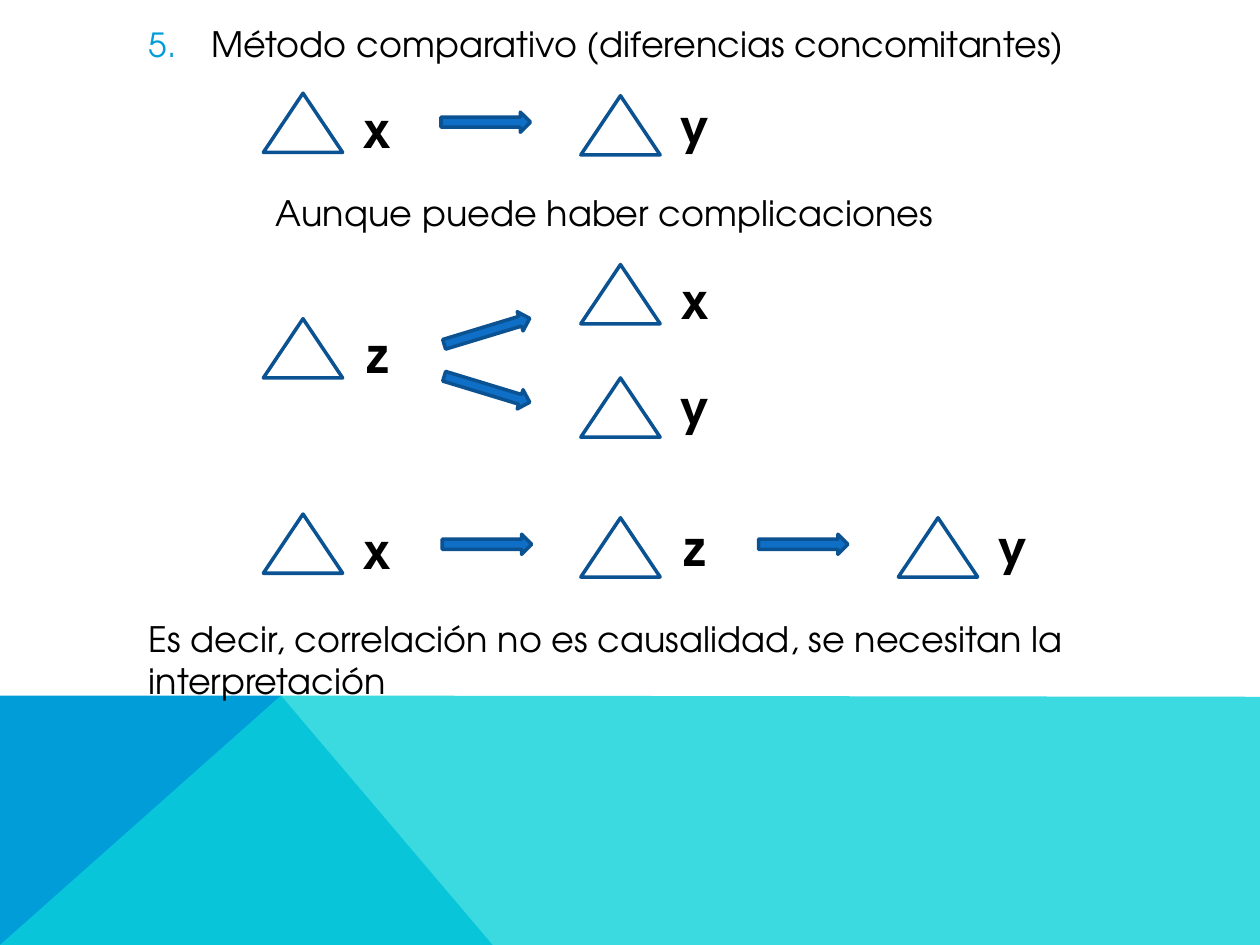
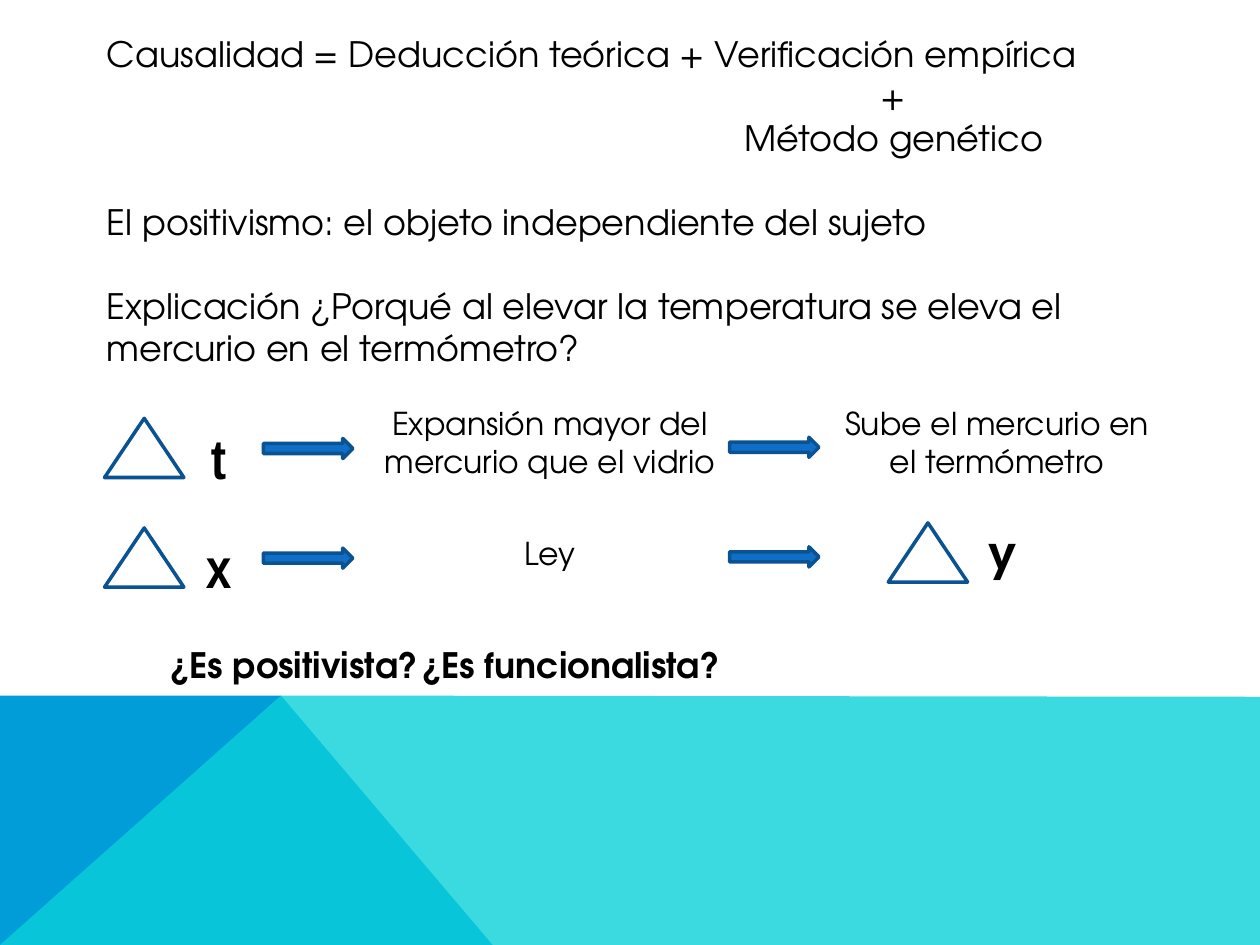
import pptx
import pptx.dml.color
import pptx.enum.shapes
import pptx.enum.text
import pptx.oxml.ns
import pptx.util
from lxml import etree

Inches = pptx.util.Inches
Pt = pptx.util.Pt
RGB = pptx.dml.color.RGBColor
KIND = pptx.enum.shapes.MSO_SHAPE
ALIGN = pptx.enum.text.PP_ALIGN
qn = pptx.oxml.ns.qn

BLACK = RGB(0x00, 0x00, 0x00)
SKY = RGB(0x00, 0x9D, 0xD9)
AQUA = RGB(0x0B, 0xD0, 0xD9)
BLUE = RGB(0x0F, 0x6F, 0xC6)
NAVY = RGB(0x0B, 0x52, 0x92)
FONT = "TeX Gyre Adventor"
NARROW = "Arial Narrow"


def write(box, text, size=20, font=FONT, bold=False, align=ALIGN.LEFT,
          before=0, left=0, hang=0, level=0, number=None, tabs=()):
    """Add one paragraph; left, hang and tabs are inches, before is points."""
    frame = box.text_frame
    frame.word_wrap = True
    para = frame.add_paragraph() if frame.text else frame.paragraphs[0]
    para.alignment = align
    para.level = level
    para.space_before = Pt(before)
    props = para._p.get_or_add_pPr()
    props.set("marL", str(Inches(left)))
    props.set("indent", str(Inches(-hang)))
    if number:
        tint = etree.SubElement(props, qn("a:buClr"))
        etree.SubElement(tint, qn("a:srgbClr"), val=str(SKY))
        etree.SubElement(props, qn("a:buSzPct"), val="95000")
        etree.SubElement(props, qn("a:buFont"), typeface=font)
        etree.SubElement(props, qn("a:buAutoNum"), type="arabicPeriod", startAt=str(number))
    else:
        etree.SubElement(props, qn("a:buNone"))
    if tabs:
        stops = etree.SubElement(props, qn("a:tabLst"))
        for stop in tabs:
            etree.SubElement(stops, qn("a:tab"), pos=str(Inches(stop)), algn="l")
    run = para.add_run()
    run.text = text
    run.font.size = Pt(size)
    run.font.name = font
    run.font.bold = bold
    run.font.color.rgb = BLACK


def draw(slide, kind, x, y, wide, high, fill=None, turn=0):
    shape = slide.shapes.add_shape(kind, Inches(x), Inches(y), Inches(wide), Inches(high))
    shape.shadow.inherit = False
    shape.rotation = turn
    shape.line.color.rgb = NAVY
    shape.line.width = Pt(2)
    if fill:
        shape.fill.solid()
        shape.fill.fore_color.rgb = fill
    else:
        shape.fill.background()


prs = pptx.Presentation()
prs.slide_width = Inches(10)
prs.slide_height = Inches(7.5)
first = prs.slides.add_slide(prs.slide_layouts[1])
second = prs.slides.add_slide(prs.slide_layouts[6])

# Bands shared by all slides, moved to the master
bands = [
    (SKY, None, [(0, 7.5), (0, 5.52), (2.23, 5.52), (3.91, 7.5)]),
    (AQUA, 80, [(0, 7.5), (2.23, 5.52), (10, 5.53), (10, 7.5)]),
]
tree = prs.slide_master.shapes.element
for place, (color, alpha, points) in enumerate(bands, start=2):
    points = [(Inches(x), Inches(y)) for x, y in points]
    pen = first.shapes.build_freeform(*points[0])
    pen.add_line_segments(points[1:], close=True)
    band = pen.convert_to_shape()
    band.shadow.inherit = False
    band.line.fill.background()
    band.fill.solid()
    band.fill.fore_color.rgb = color
    if alpha:
        tone = band.element.spPr.find(qn("a:solidFill")).find(qn("a:srgbClr"))
        etree.SubElement(tone, qn("a:alpha"), val=str(alpha * 1000))
    tree.insert(place, band.element)

# Slide 1: comparative method
title = first.shapes.title.element
title.getparent().remove(title)
body = first.placeholders[1]
body.left, body.top = Inches(0.59), Inches(0.13)
body.width, body.height = Inches(8.82), Inches(5.98)
body.text_frame.auto_size = pptx.enum.text.MSO_AUTO_SIZE.NONE
body.text_frame.vertical_anchor = pptx.enum.text.MSO_ANCHOR.TOP
write(body, "Método comparativo (diferencias concomitantes)",
      level=1, left=0.99, hang=0.5, number=5)
write(body, "Aunque puede haber complicaciones", level=1, left=1.5, before=72.6)
write(body, "Es decir, correlación no es causalidad, se necesitan la interpretación",
      level=1, left=0.49, before=219)

# Slide 2: causality and explanation
notes = second.shapes.add_textbox(Inches(0.75), Inches(0.21), Inches(8.03), Inches(5.49))
write(notes, "Causalidad = Deducción teórica + Verificación empírica")
write(notes, "+", left=6.14)
write(notes, "Método genético", left=5.06)
write(notes, "El positivismo: el objeto independiente del sujeto", before=24)
write(notes, "Explicación ¿Porqué al elevar la temperatura se eleva el mercurio en el termómetro?",
      before=24)
write(notes, "\t¿Es positivista?\t¿Es funcionalista?", bold=True, before=157, tabs=(1.51, 3.95))

for x, y, high, text in [
    (2.95, 3.16, 0.71, "Expansión mayor del mercurio que el vidrio"),
    (6.5, 3.16, 0.71, "Sube el mercurio en el termómetro"),
    (2.95, 4.19, 0.4, "Ley"),
]:
    step = second.shapes.add_textbox(Inches(x), Inches(y), Inches(2.83), Inches(high))
    write(step, text, size=18, align=ALIGN.CENTER)

# Deltas: triangle left and top, letter, letter top, letter size and font
deltas = [
    (first, 2.09, 0.74, "x", 0.74, 28, FONT),
    (first, 4.61, 0.76, "y", 0.72, 28, FONT),
    (first, 2.09, 2.53, "z", 2.53, 28, FONT),
    (first, 4.61, 2.1, "x", 2.1, 28, FONT),
    (first, 4.61, 3, "y", 2.95, 28, FONT),
    (first, 2.09, 4.08, "x", 4.08, 28, FONT),
    (first, 4.61, 4.11, "z", 4.06, 28, FONT),
    (first, 7.13, 4.11, "y", 4.06, 28, FONT),
    (second, 0.83, 3.32, "t", 3.31, 32, NARROW),
    (second, 0.83, 4.19, "x", 4.18, 32, NARROW),
    (second, 7.05, 4.15, "y", 4.1, 28, FONT),
]
for slide, x, y, name, top, size, font in deltas:
    draw(slide, KIND.ISOSCELES_TRIANGLE, x, y, 0.63, 0.47)
    label = slide.shapes.add_textbox(Inches(x + 0.63), Inches(top), Inches(0.55),
                                     Inches(size / 50))
    write(label, name, size=size, font=font, bold=True, align=ALIGN.CENTER)

arrows = [
    (first, 3.5, 0.89, 0),
    (first, 3.51, 2.55, -16.9),
    (first, 3.51, 3.01, 16.9),
    (first, 3.51, 4.24, 0),
    (first, 6.02, 4.24, 0),
    (second, 2.09, 3.48, 0),
    (second, 5.79, 3.47, 0),
    (second, 2.09, 4.35, 0),
    (second, 5.79, 4.34, 0),
]
for slide, x, y, turn in arrows:
    draw(slide, KIND.RIGHT_ARROW, x, y, 0.71, 0.16, fill=BLUE, turn=turn)

prs.save("out.pptx")
